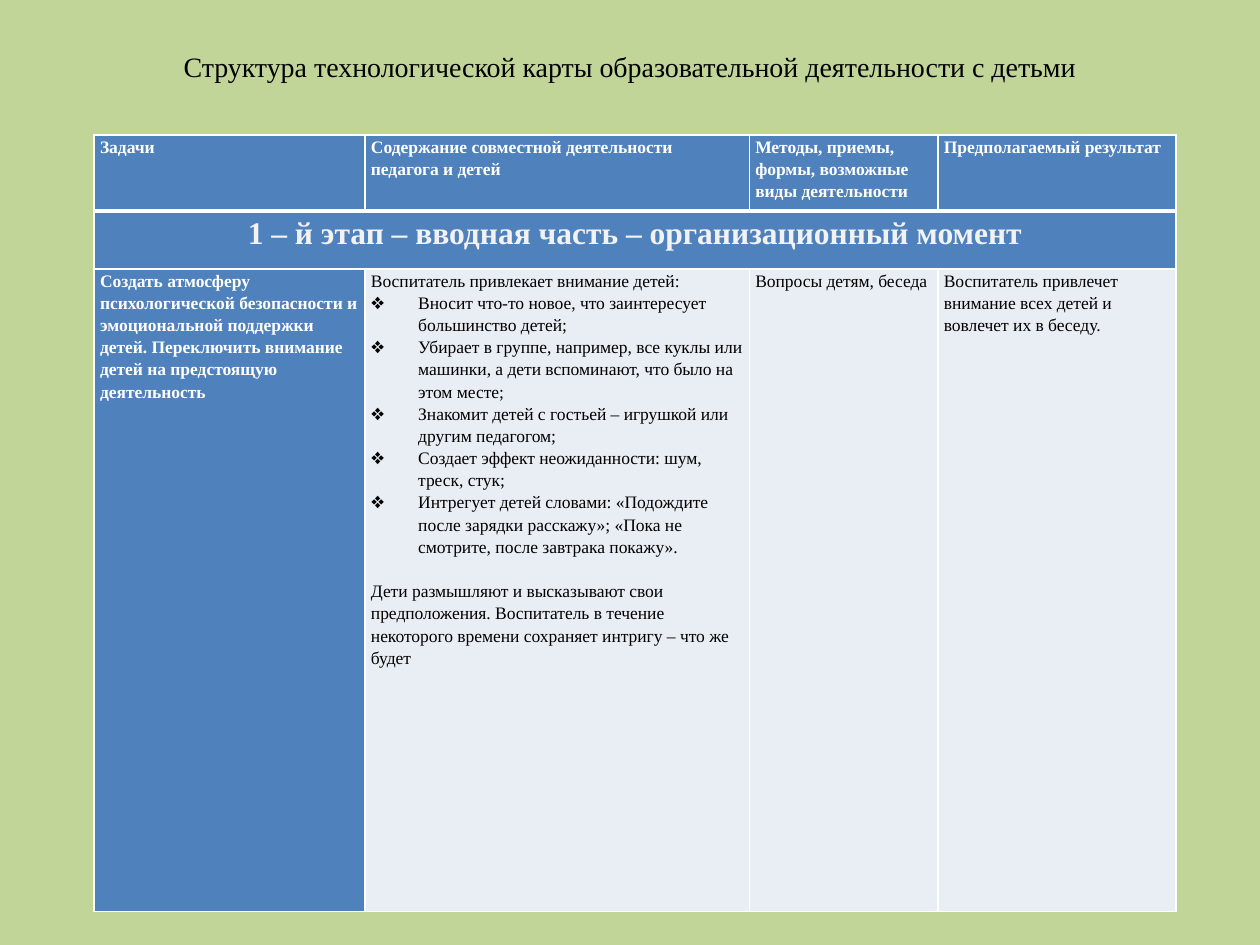
from lxml.etree import SubElement
from pptx import Presentation
from pptx.dml.color import RGBColor
from pptx.enum.text import MSO_ANCHOR, MSO_AUTO_SIZE, PP_ALIGN
from pptx.oxml.ns import qn
from pptx.util import Pt

FONT = "Times New Roman"
BLUE, PALE, WHITE, BLACK = "4F81BD", "E9EDF4", "FFFFFF", "000000"
COLUMN_WIDTHS = [154.8, 219.6, 107.8, 136]
ROW_HEIGHTS = [43.4, 33.1, 367.4]

TITLE = "Структура технологической карты образовательной деятельности с детьми"
HEADERS = [
    "Задачи",
    "Содержание совместной деятельности педагога и детей",
    "Методы, приемы, формы, возможные виды деятельности",
    "Предполагаемый результат",
]
STAGE = "1 – й этап – вводная часть – организационный момент"
TASKS = (
    "Создать атмосферу психологической безопасности и эмоциональной поддержки "
    "детей. Переключить внимание детей на предстоящую деятельность"
)
CONTENT_INTRO = "Воспитатель привлекает внимание детей:"
CONTENT_BULLETS = [
    "Вносит что-то новое, что заинтересует большинство детей;",
    "Убирает в группе, например, все куклы или машинки, а дети вспоминают, что было на этом месте;",
    "Знакомит детей с гостьей – игрушкой или другим педагогом;",
    "Создает эффект неожиданности: шум, треск, стук;",
    "Интрегует детей словами: «Подождите после зарядки расскажу»; "
    "«Пока не смотрите, после завтрака покажу».",
]
CONTENT_CLOSING = (
    "Дети размышляют и высказывают свои предположения. Воспитатель в течение "
    "некоторого времени сохраняет интригу – что же будет"
)
METHODS = "Вопросы детям, беседа"
RESULT = "Воспитатель привлечет внимание всех детей и вовлечет их в беседу."


def color(value):
    return RGBColor.from_string(value)


def format_runs(paragraph, size, text_color, bold=False):
    for run in paragraph.runs:
        run.font.name = FONT
        run.font.size = Pt(size)
        run.font.bold = bold
        run.font.color.rgb = color(text_color)


def add_border(cell, side, width):
    line = SubElement(cell._tc.get_or_add_tcPr(), qn(f"a:ln{side}"), w=str(Pt(width)))
    fill = SubElement(line, qn("a:solidFill"))
    SubElement(fill, qn("a:srgbClr"), val=WHITE)


def add_bullet(paragraph, indent):
    properties = paragraph._p.get_or_add_pPr()
    properties.set("marL", str(Pt(indent)))
    properties.set("indent", str(-Pt(indent)))
    SubElement(properties, qn("a:buFont"), typeface=FONT)
    SubElement(properties, qn("a:buChar"), char="❖")


def style_cell(cell, fill, top=1, bottom=1):
    for side, width in (("L", 1), ("R", 1), ("T", top), ("B", bottom)):
        add_border(cell, side, width)
    cell.fill.solid()
    cell.fill.fore_color.rgb = color(fill)
    cell.margin_left = cell.margin_right = Pt(3.4)
    cell.margin_top = cell.margin_bottom = Pt(0)


def write_cell(cell, lines, size=10, text_color=BLACK, bold=False):
    cell.text_frame.text = "\n".join(lines)
    for paragraph in cell.text_frame.paragraphs:
        paragraph.line_spacing = 1.15
        format_runs(paragraph, size, text_color, bold)


def add_title(slide, left, top, width, height):
    title = slide.shapes.title
    title.left, title.top, title.width, title.height = map(Pt, (left, top, width, height))
    frame = title.text_frame
    frame.text = TITLE
    frame.word_wrap = True
    frame.auto_size = MSO_AUTO_SIZE.NONE
    frame.vertical_anchor = MSO_ANCHOR.MIDDLE
    paragraph = frame.paragraphs[0]
    paragraph.alignment = PP_ALIGN.CENTER
    format_runs(paragraph, 16, BLACK)


def add_plan_table(slide, left, top):
    box = map(Pt, (left, top, sum(COLUMN_WIDTHS), sum(ROW_HEIGHTS)))
    table = slide.shapes.add_table(len(ROW_HEIGHTS), len(COLUMN_WIDTHS), *box).table
    table.horz_banding = False
    for column, width in zip(table.columns, COLUMN_WIDTHS):
        column.width = Pt(width)
    for row, height in zip(table.rows, ROW_HEIGHTS):
        row.height = Pt(height)

    header_row, stage_row, detail_row = (list(row.cells) for row in table.rows)
    for cell, text in zip(header_row, HEADERS):
        style_cell(cell, BLUE, bottom=3)
        write_cell(cell, [text], text_color=WHITE, bold=True)

    for cell in stage_row:
        style_cell(cell, BLUE, top=3)
    stage_row[0].merge(stage_row[-1])
    write_cell(stage_row[0], [STAGE], 18, "F2F2F2", True)
    stage_row[0].text_frame.paragraphs[0].alignment = PP_ALIGN.CENTER

    tasks, content, methods, result = detail_row
    style_cell(tasks, BLUE)
    write_cell(tasks, [TASKS], text_color=WHITE, bold=True)
    content_lines = [CONTENT_INTRO, *CONTENT_BULLETS, CONTENT_CLOSING]
    for cell, lines in ((content, content_lines), (methods, [METHODS]), (result, [RESULT])):
        style_cell(cell, PALE)
        write_cell(cell, lines)

    intro, *bullets, closing = content.text_frame.paragraphs
    for paragraph in bullets:
        add_bullet(paragraph, 27)
    closing.space_before = Pt(12.7)


def main():
    presentation = Presentation()
    presentation.slide_width, presentation.slide_height = Pt(720), Pt(540)
    slide = presentation.slides.add_slide(presentation.slide_layouts[5])
    background = slide.background.fill
    background.solid()
    background.fore_color.rgb = color("C1D598")
    add_title(slide, 36, 21.6, 648, 33.1)
    add_plan_table(slide, 53.8, 77.1)
    presentation.save("out.pptx")


if __name__ == "__main__":
    main()
